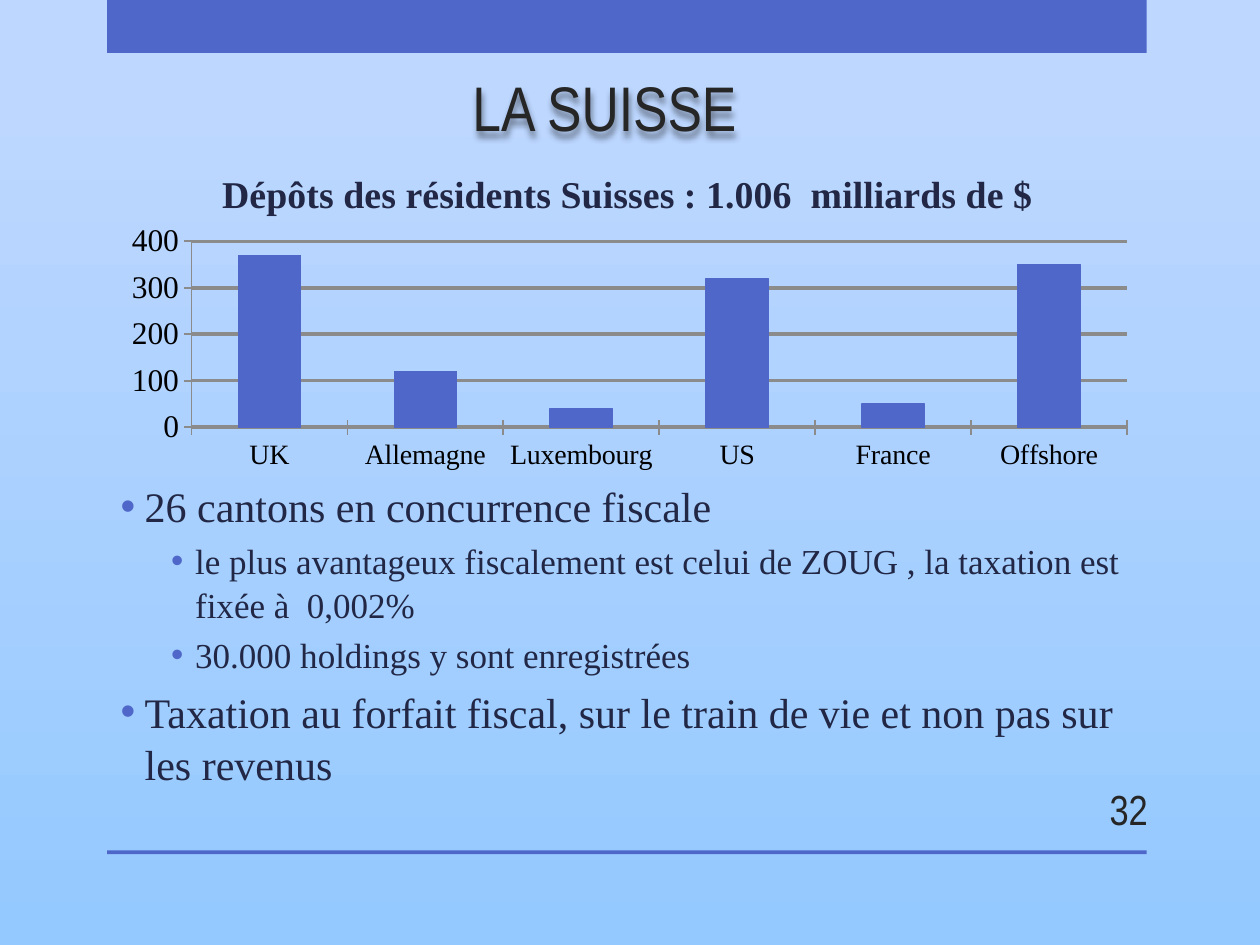
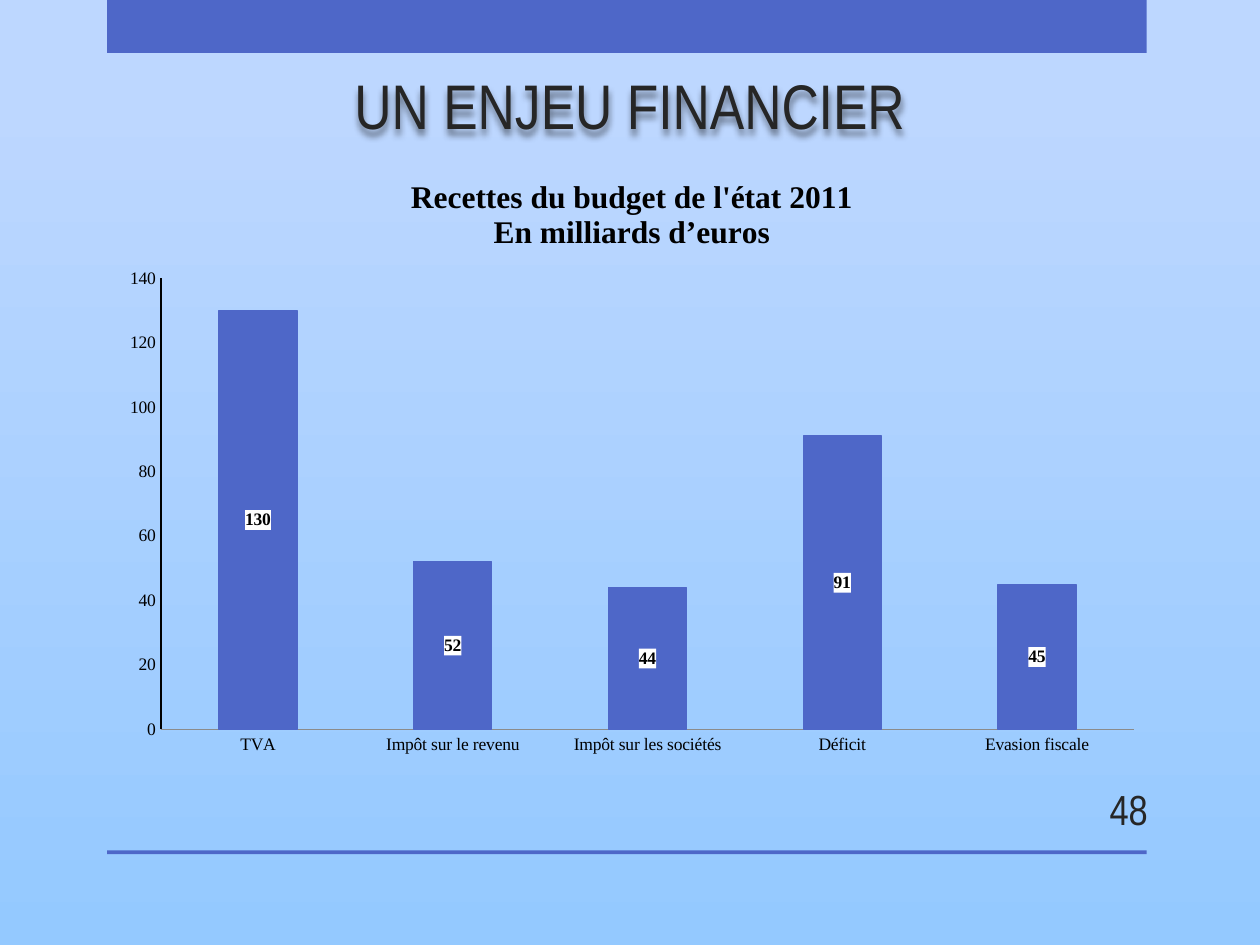
from lxml import etree
from pptx import Presentation
from pptx.chart.data import CategoryChartData
from pptx.dml.color import RGBColor
from pptx.enum.chart import XL_CHART_TYPE, XL_LABEL_POSITION, XL_TICK_MARK
from pptx.enum.shapes import MSO_SHAPE
from pptx.enum.text import MSO_ANCHOR, PP_ALIGN
from pptx.oxml import parse_xml
from pptx.oxml.ns import qn
from pptx.util import Pt

COLUMNS = XL_CHART_TYPE.COLUMN_CLUSTERED
LABEL_CENTER = XL_LABEL_POSITION.CENTER
TICK_CROSS, TICK_NONE = XL_TICK_MARK.CROSS, XL_TICK_MARK.NONE
RECT = MSO_SHAPE.RECTANGLE
MIDDLE, BOTTOM = MSO_ANCHOR.MIDDLE, MSO_ANCHOR.BOTTOM
LEFT, CENTER, RIGHT = PP_ALIGN.LEFT, PP_ALIGN.CENTER, PP_ALIGN.RIGHT

SANS, SERIF = "Arial Narrow", "Times New Roman"
BLUE, NAVY, DARK, BLACK, GREY, WHITE = "4E67C8", "212745", "262626", "000000", "8B8B8B", "FFFFFF"
SKY = [(0.1, "BDD7FF"), (1, "94C9FF")]
BANDS = [(61.2, 0, 594, 30.24), (61.2, 486, 594, 2.16)]
NUMBER_BOX = (599.76, 447.84, 59.76, 28.8)
BODY_BOX = (61.92, 245.52, 598.32, 233.28)
LEVELS = {1: dict(size=24, indent=13.68), 2: dict(size=20, indent=42.48)}
HANGING = 13.68
A_NS = 'xmlns:a="http://schemas.openxmlformats.org/drawingml/2006/main"'
C_NS = 'xmlns:c="http://schemas.openxmlformats.org/drawingml/2006/chart"'

SUISSE = dict(
    title="LA SUISSE\t", title_box=(43.2, 30.96, 633.6, 54.72), number="32",
    bullets=[
        (1, "26 cantons en concurrence fiscale"),
        (2, "le plus avantageux fiscalement est celui de ZOUG , la taxation est fixée à  0,002%"),
        (2, "30.000 holdings y sont enregistrées"),
        (1, "Taxation au forfait fiscal, sur le train de vie et non pas sur les revenus"),
    ],
    chart=dict(
        box=(61.92, 85.68, 594, 186.48), plot=(0.08, 0.28, 0.9, 0.57),
        heading=["Dépôts des résidents Suisses : 1.006  milliards de $"],
        heading_size=21.6, heading_color=NAVY,
        data={"UK": 370, "Allemagne": 120, "Luxembourg": 40, "US": 320,
              "France": 50, "Offshore": 350},
        top=400, step=100, size=18, cat_size=16, tick=TICK_CROSS,
        grid=True, labels=False, axis_line=(GREY, 1),
    ),
)
ENJEU = dict(
    title="UN ENJEU FINANCIER", title_box=(43.2, 27.36, 633.6, 57.6), number="48",
    bullets=[],
    chart=dict(
        box=(61.92, 89.28, 598.32, 348.48), plot=(0.05, 0.2, 0.93, 0.74),
        heading=["Recettes du budget de l'état 2011", "En milliards d’euros"],
        heading_size=18, heading_color=BLACK,
        data={"TVA": 130, "Impôt sur le revenu": 52, "Impôt sur les sociétés": 44,
              "Déficit": 91, "Evasion fiscale": 45},
        top=140, step=20, size=10, cat_size=10, tick=TICK_NONE,
        grid=False, labels=True, axis_line=(BLACK, 1.25),
    ),
)


def rgb(value):
    return RGBColor.from_string(value)


def points(box):
    return [Pt(v) for v in box]


def set_font(font, name, size, color, bold=False):
    font.name, font.size, font.bold = name, Pt(size), bold
    font.color.rgb = rgb(color)


def set_line(line, color, width):
    line.color.rgb = rgb(color)
    line.width = Pt(width)


def add_text(p, text, font=SERIF, size=24, color=NAVY, bold=False, align=LEFT):
    p.alignment = align
    r = p.add_run()
    r.text = text
    set_font(r.font, font, size, color, bold)


def add_box(s, box, anchor):
    sp = s.shapes.add_textbox(*points(box))
    sp.text_frame.word_wrap = True
    sp.text_frame.vertical_anchor = anchor
    return sp


def add_shadow(sp):
    sp._element.spPr.append(parse_xml(
        f'<a:effectLst {A_NS}><a:outerShdw blurRad="50800" dist="38100" dir="5400000">'
        '<a:srgbClr val="000000"><a:alpha val="45000"/></a:srgbClr>'
        '</a:outerShdw></a:effectLst>'))


def add_bullet(p):
    pPr = p._p.get_or_add_pPr()
    color = etree.SubElement(pPr, qn("a:buClr"))
    etree.SubElement(color, qn("a:srgbClr"), val=BLUE)
    etree.SubElement(pPr, qn("a:buFont"), typeface="Arial")
    etree.SubElement(pPr, qn("a:buChar"), char="•")
    return pPr


def add_bullets(s, bullets):
    tf = add_box(s, BODY_BOX, MIDDLE).text_frame
    for i, (level, text) in enumerate(bullets):
        p = tf.add_paragraph() if i else tf.paragraphs[0]
        style = LEVELS[level]
        pPr = add_bullet(p)
        pPr.set("marL", str(Pt(style["indent"])))
        pPr.set("indent", str(-Pt(HANGING)))
        p.level = level - 1
        p.line_spacing = 1.04
        if i:
            p.space_before = Pt(style["size"] * 0.2)
        add_text(p, text, size=style["size"])


def place_plot(chart, plot):
    area = chart._chartSpace.chart.plotArea
    for layout in area.findall(qn("c:layout")):
        area.remove(layout)
    sizes = "".join(f'<c:{k} val="{v}"/>' for k, v in zip("xywh", plot))
    area.insert(0, parse_xml(
        f'<c:layout {C_NS}><c:manualLayout><c:layoutTarget val="inner"/>'
        f'<c:xMode val="edge"/><c:yMode val="edge"/>{sizes}</c:manualLayout></c:layout>'))


def add_labels(plot, size):
    plot.has_data_labels = True
    labels = plot.data_labels
    labels.show_value = True
    labels.position = LABEL_CENTER
    set_font(labels.font, SERIF, size, BLACK, True)
    labels._element.find(qn("c:txPr")).addprevious(parse_xml(
        f'<c:spPr {C_NS} {A_NS}><a:solidFill><a:srgbClr val="{WHITE}"/></a:solidFill></c:spPr>'))


def add_columns(s, spec):
    data = CategoryChartData()
    data.categories = list(spec["data"])
    data.add_series("Series 1", list(spec["data"].values()))
    chart = s.shapes.add_chart(COLUMNS, *points(spec["box"]), data).chart
    set_font(chart.font, SERIF, spec["size"], BLACK)
    chart.has_legend = False
    chart.has_title = True
    chart.chart_title.include_in_layout = False
    tf = chart.chart_title.text_frame
    for i, text in enumerate(spec["heading"]):
        p = tf.add_paragraph() if i else tf.paragraphs[0]
        add_text(p, text, size=spec["heading_size"], color=spec["heading_color"],
                 bold=True, align=CENTER)
    place_plot(chart, spec["plot"])

    plot = chart.plots[0]
    plot.gap_width = 150
    plot.vary_by_categories = False
    series = plot.series[0]
    series.format.fill.solid()
    series.format.fill.fore_color.rgb = rgb(BLUE)
    set_line(series.format.line, BLUE, 0.75)
    if spec["labels"]:
        add_labels(plot, spec["size"])

    cats, vals = chart.category_axis, chart.value_axis
    vals.minimum_scale, vals.maximum_scale, vals.major_unit = 0, spec["top"], spec["step"]
    vals.has_major_gridlines = spec["grid"]
    if spec["grid"]:
        set_line(vals.major_gridlines.format.line, GREY, 2)
    for axis, size, line in ((cats, spec["cat_size"], (GREY, 1)),
                             (vals, spec["size"], spec["axis_line"])):
        axis.major_tick_mark = spec["tick"]
        axis.minor_tick_mark = TICK_NONE
        set_font(axis.tick_labels.font, SERIF, size, BLACK)
        set_line(axis.format.line, *line)


def add_base(prs, title, title_box, number):
    s = prs.slides.add_slide(prs.slide_layouts[6])
    fill = s.background.fill
    fill.gradient()
    fill.gradient_angle = 270
    for stop, (position, color) in zip(fill.gradient_stops, SKY):
        stop.position = position
        stop.color.rgb = rgb(color)
    for band in BANDS:
        sp = s.shapes.add_shape(RECT, *points(band))
        sp.shadow.inherit = False
        sp.fill.solid()
        sp.fill.fore_color.rgb = rgb(BLUE)
        sp.line.fill.background()
    sp = add_box(s, title_box, BOTTOM)
    add_text(sp.text_frame.paragraphs[0], title, font=SANS, size=36, color=DARK, align=CENTER)
    add_shadow(sp)
    sp = add_box(s, NUMBER_BOX, MIDDLE)
    sp.text_frame.margin_right = Pt(3.6)
    add_text(sp.text_frame.paragraphs[0], number, font=SANS, color=DARK, align=RIGHT)
    return s


def main():
    prs = Presentation()
    prs.slide_width, prs.slide_height = Pt(720), Pt(540)
    for page in (SUISSE, ENJEU):
        s = add_base(prs, page["title"], page["title_box"], page["number"])
        if page["bullets"]:
            add_bullets(s, page["bullets"])
        add_columns(s, page["chart"])
    prs.save("out.pptx")


if __name__ == "__main__":
    main()
